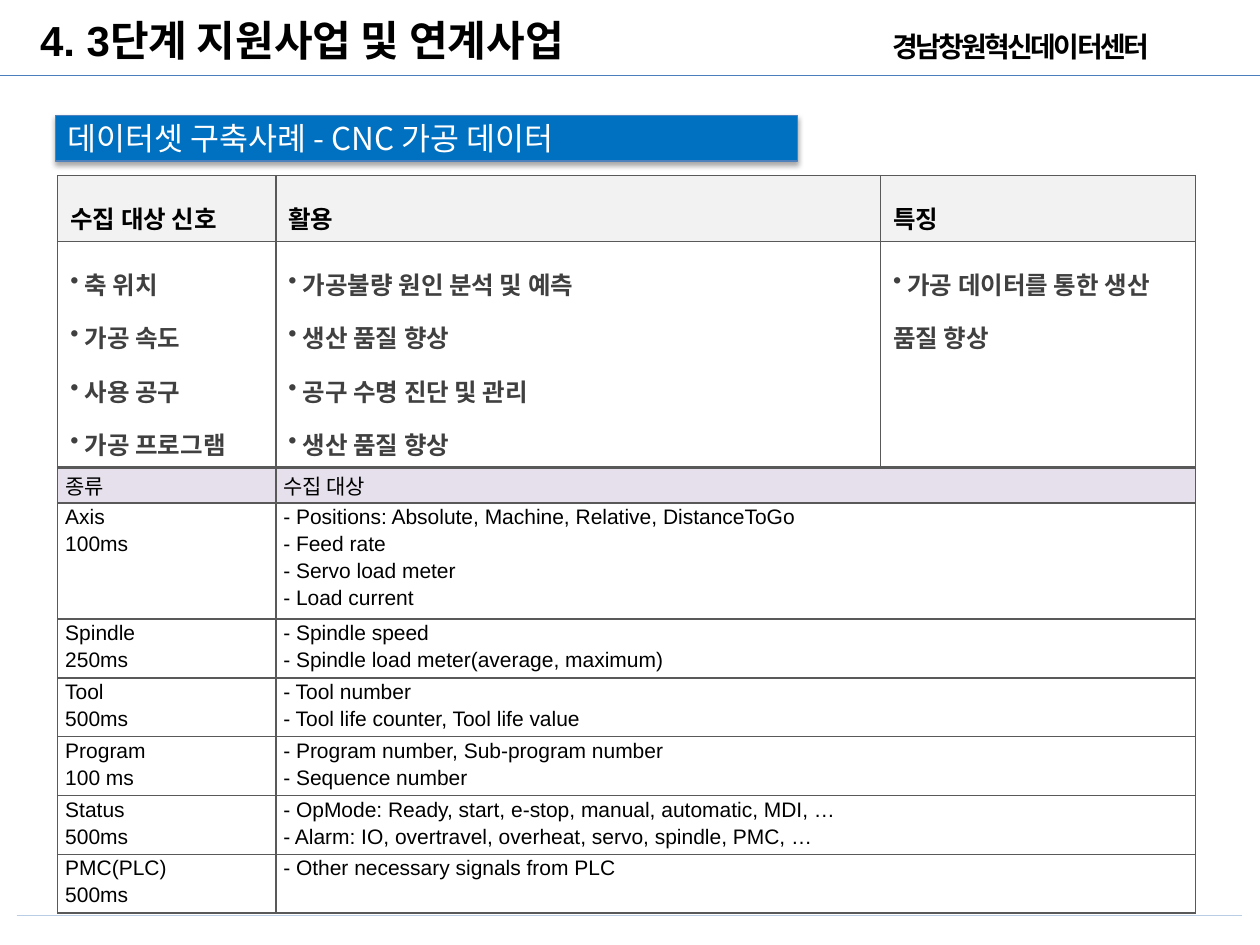
import pptx
import pptx.dml.color
import pptx.enum.shapes
import pptx.enum.text
import pptx.oxml
import pptx.oxml.ns
import pptx.util
from lxml import etree

Pt = pptx.util.Pt
qn = pptx.oxml.ns.qn
MIDDLE = pptx.enum.text.MSO_ANCHOR.MIDDLE
TOP = pptx.enum.text.MSO_ANCHOR.TOP

COLORS = {
    "black": "000000",
    "white": "FFFFFF",
    "body": "404040",
    "border": "595959",
    "header": "F2F2F2",
    "lavender": "E6E0EC",
    "banner": "0070C0",
    "banner_line": "4F81BD",
    "top_rule": "4B7EBC",
    "bottom_rule": "B9CDE5",
}
LATIN = "Arial"
KOREAN = "Noto Sans CJK KR"

SIGNAL_HEADERS = ["수집 대상 신호", "활용", "특징"]
SIGNAL_DETAILS = [
    ["축 위치", "가공 속도", "사용 공구", "가공 프로그램"],
    ["가공불량 원인 분석 및 예측", "생산 품질 향상", "공구 수명 진단 및 관리", "생산 품질 향상"],
    ["가공 데이터를 통한 생산 품질 향상"],
]
COLLECTION_ROWS = [
    (["종류"], ["수집 대상"]),
    (["Axis", "100ms"],
     ["- Positions: Absolute, Machine, Relative, DistanceToGo",
      "- Feed rate", "- Servo load meter", "- Load current"]),
    (["Spindle", "250ms"],
     ["- Spindle speed", "- Spindle load meter(average, maximum)"]),
    (["Tool", "500ms"],
     ["- Tool number", "- Tool life counter, Tool life value"]),
    (["Program", "100 ms"],
     ["- Program number, Sub-program number", "- Sequence number"]),
    (["Status", "500ms"],
     ["- OpMode: Ready, start, e-stop, manual, automatic, MDI, …",
      "- Alarm: IO, overtravel, overheat, servo, spindle, PMC, …"]),
    (["PMC(PLC)", "500ms"], ["- Other necessary signals from PLC"]),
]


def rgb(name):
    return pptx.dml.color.RGBColor.from_string(COLORS[name])


def add_run(paragraph, text, size, color="black", bold=False, font=LATIN):
    run = paragraph.add_run()
    run.text = text
    run.font.size = Pt(size)
    run.font.bold = bold
    run.font.name = font
    run.font.color.rgb = rgb(color)
    east_asian = etree.SubElement(run.font._element, qn("a:ea"))
    east_asian.set("typeface", KOREAN)
    return run


def add_rule(slide, left, right, y, color, width):
    connector = slide.shapes.add_connector(
        pptx.enum.shapes.MSO_CONNECTOR.STRAIGHT, Pt(left), Pt(y), Pt(right), Pt(y))
    connector.line.color.rgb = rgb(color)
    connector.line.width = Pt(width)
    etree.SubElement(connector._element.spPr, qn("a:effectLst"))


def add_label(slide, left, top, width, height, text, size, **style):
    shape = slide.shapes.add_textbox(Pt(left), Pt(top), Pt(width), Pt(height))
    frame = shape.text_frame
    frame.word_wrap = True
    frame.vertical_anchor = MIDDLE
    return add_run(frame.paragraphs[0], text, size, **style)


def add_banner(slide, text):
    shape = slide.shapes.add_shape(
        pptx.enum.shapes.MSO_SHAPE.RECTANGLE, Pt(31.7), Pt(66), Pt(424), Pt(26))
    shape.fill.solid()
    shape.fill.fore_color.rgb = rgb("banner")
    shape.line.color.rgb = rgb("banner_line")
    shape.line.width = Pt(0.75)
    shape.shadow.inherit = False
    effects = shape._element.spPr.find(qn("a:effectLst"))
    shadow = etree.SubElement(
        effects, qn("a:outerShdw"), blurRad=str(Pt(3.1)), dist=str(Pt(1.8)),
        dir="5400000", rotWithShape="0")
    shade = etree.SubElement(shadow, qn("a:srgbClr"), val=COLORS["black"])
    etree.SubElement(shade, qn("a:alpha"), val="35000")
    frame = shape.text_frame
    frame.word_wrap = True
    frame.vertical_anchor = MIDDLE
    paragraph = frame.paragraphs[0]
    paragraph.alignment = pptx.enum.text.PP_ALIGN.LEFT
    add_run(paragraph, text, 18, color="white", font=KOREAN)


def add_grid(slide, left, top, widths, heights):
    table = slide.shapes.add_table(
        len(heights), len(widths), Pt(left), Pt(top),
        Pt(sum(widths)), Pt(sum(heights))).table
    table.first_row = False
    table.horz_banding = False
    for column, width in zip(table.columns, widths):
        column.width = Pt(width)
    for row, height in zip(table.rows, heights):
        row.height = Pt(height)
    return table


def add_borders(cell):
    properties = cell._tc.get_or_add_tcPr()
    for position, side in enumerate(("lnL", "lnR", "lnT", "lnB")):
        line = etree.Element(qn("a:" + side), w=str(Pt(1)))
        fill = etree.SubElement(line, qn("a:solidFill"))
        etree.SubElement(fill, qn("a:srgbClr"), val=COLORS["border"])
        properties.insert(position, line)


def fill_cell(cell, lines, size, fill=None, color="black", bold=False, anchor=TOP,
              bullet=False, spacing=None, after=None, margins=None):
    if fill:
        cell.fill.solid()
        cell.fill.fore_color.rgb = rgb(fill)
    else:
        cell.fill.background()
    add_borders(cell)
    cell.vertical_anchor = anchor
    if margins:
        cell.margin_left = cell.margin_right = Pt(margins[0])
        cell.margin_top = cell.margin_bottom = Pt(margins[1])
    frame = cell.text_frame
    for index, text in enumerate(lines):
        paragraph = frame.add_paragraph() if index else frame.paragraphs[0]
        if bullet:
            properties = paragraph._p.get_or_add_pPr()
            etree.SubElement(properties, qn("a:buChar"), char="•")
            text = " " + text
        if spacing:
            paragraph.line_spacing = spacing
        if after:
            paragraph.space_after = Pt(after)
        add_run(paragraph, text, size, color=color, bold=bold)


def add_signal_table(slide):
    table = add_grid(slide, 33, 100.3, [124.6, 345.6, 180], [37.7, 129])
    for column, (header, details) in enumerate(zip(SIGNAL_HEADERS, SIGNAL_DETAILS)):
        fill_cell(table.cell(0, column), [header], 14, fill="header", bold=True,
                  anchor=MIDDLE, spacing=1.5)
        fill_cell(table.cell(1, column), details, 14, color="body", bold=True,
                  bullet=True, spacing=1.5)


def add_collection_table(slide):
    table = add_grid(slide, 33, 267.3, [124.6, 525.6], [20, 62.8] + [31.7] * 5)
    for row, contents in enumerate(COLLECTION_ROWS):
        for column, lines in enumerate(contents):
            fill_cell(table.cell(row, column), lines, 12,
                      fill="white" if row else "lavender",
                      after=2, margins=(4.3, 1.4))


def main():
    presentation = pptx.Presentation()
    presentation.slide_width = Pt(720)
    presentation.slide_height = Pt(540)
    slide = presentation.slides.add_slide(presentation.slide_layouts[6])
    add_rule(slide, 0, 720, 43.2, "top_rule", 0.75)
    add_rule(slide, 9.5, 710, 523.2, "bottom_rule", 1)
    center = add_label(slide, 503, 14.4, 217, 24, "경남창원혁신데이터센터", 16,
                       bold=True, font=KOREAN)
    center.font._element.set("spc", "-150")
    add_banner(slide, "데이터셋 구축사례 - CNC 가공 데이터")
    add_label(slide, 15.8, 5, 353.5, 36, "4. 3단계 지원사업 및 연계사업", 24, bold=True)
    add_signal_table(slide)
    add_collection_table(slide)
    presentation.save("out.pptx")


if __name__ == "__main__":
    main()
